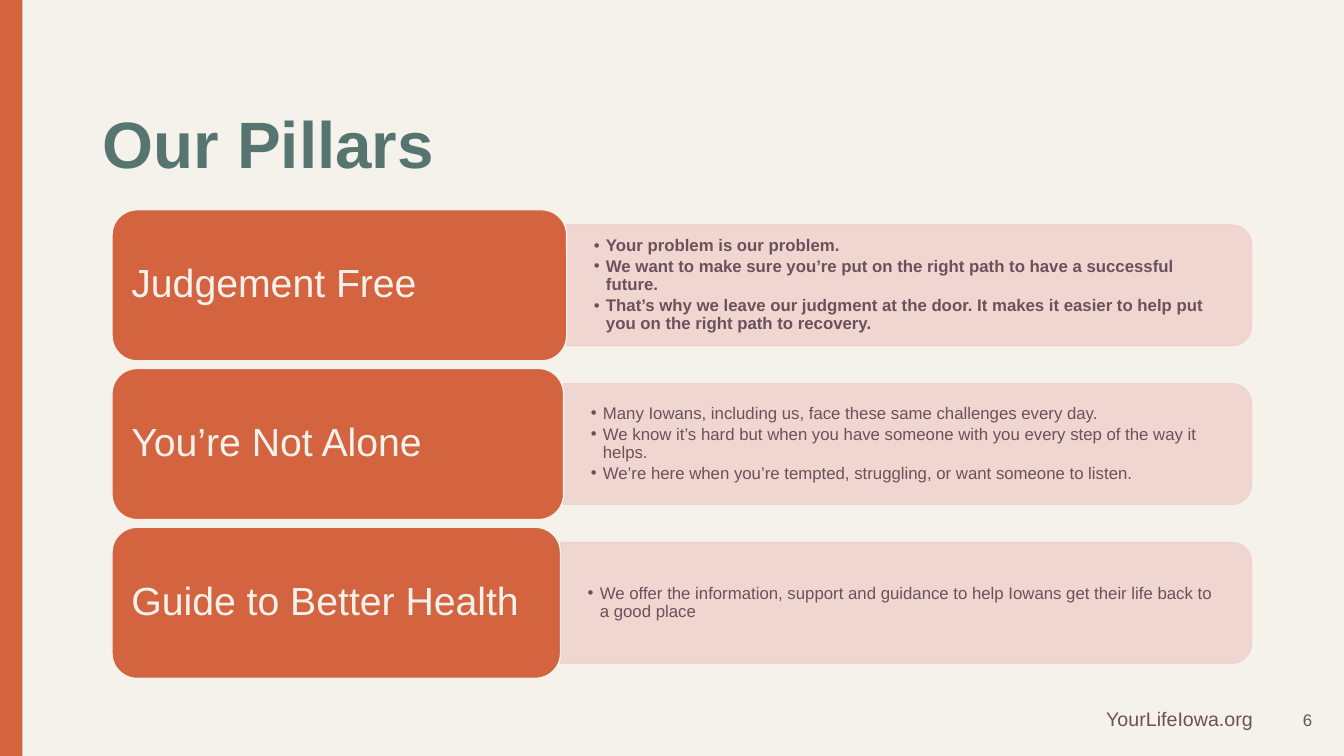
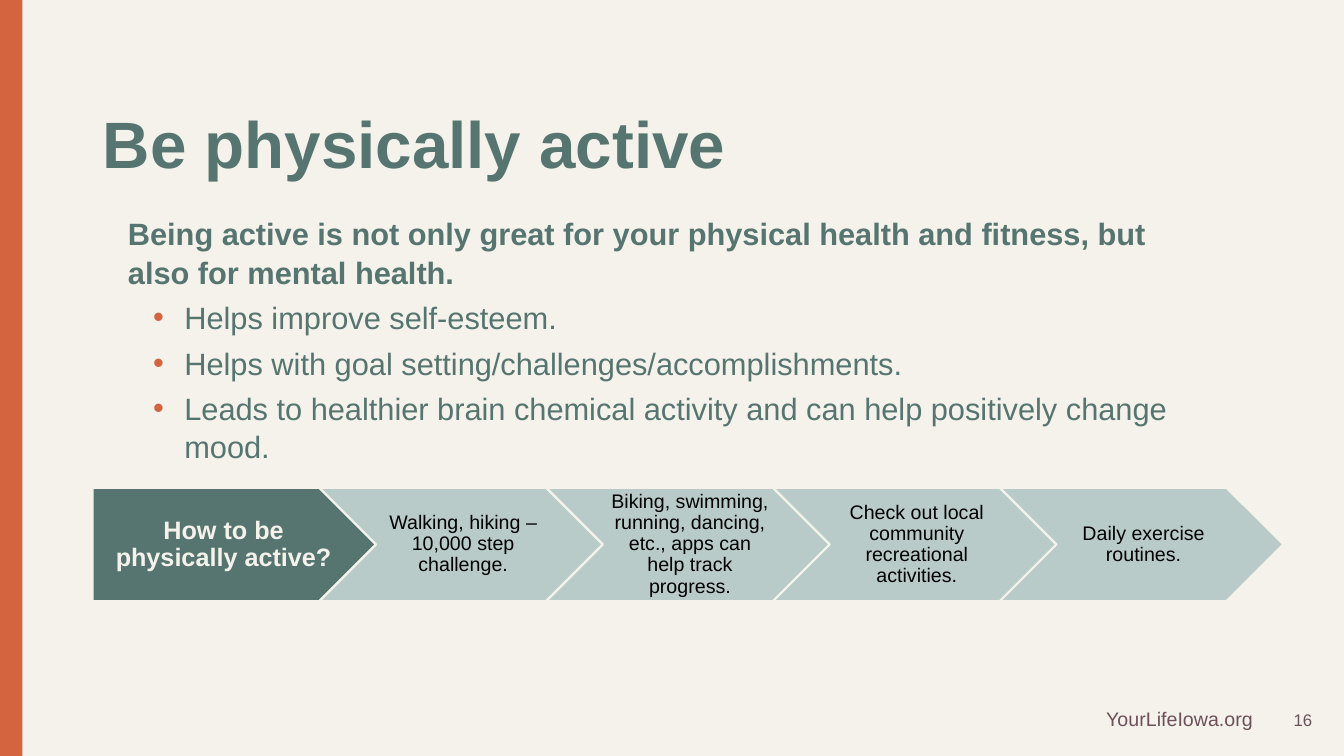
from lxml.etree import SubElement
from pptx import Presentation
from pptx.dml.color import RGBColor
from pptx.enum.shapes import MSO_SHAPE
from pptx.enum.text import MSO_ANCHOR, MSO_AUTO_SIZE, PP_ALIGN
from pptx.oxml.ns import qn
from pptx.util import Inches, Pt

COLORS = {
    "paper": "F4F2EB",
    "orange": "D46340",
    "green": "577570",
    "mist": "B9CBC8",
    "blush": "EFD3CF",
    "plum": "6B5159",
    "black": "000000",
}
FONT = "Arial"
COLUMNS, ROWS = 48, 27
WIDTH, HEIGHT = Inches(13.33), Inches(7.5)

PILLARS = [
    ("Judgement Free", True, [
        "Your problem is our problem.",
        "We want to make sure you’re put on the right path to have a successful future.",
        "That’s why we leave our judgment at the door. It makes it easier to help put you "
        "on the right path to recovery.",
    ]),
    ("You’re Not Alone", False, [
        "Many Iowans, including us, face these same challenges every day.",
        "We know it’s hard but when you have someone with you every step of the way it helps.",
        "We’re here when you’re tempted, struggling, or want someone to listen.",
    ]),
    ("Guide to Better Health", False, [
        "We offer the information, support and guidance to help Iowans get their life back "
        "to a good place",
    ]),
]
BENEFITS = [
    "Helps improve self-esteem.",
    "Helps with goal setting/challenges/accomplishments.",
    "Leads to healthier brain chemical activity and can help positively change mood.",
]
ACTIVITIES = [
    "Walking, hiking – 10,000 step challenge.",
    "Biking, swimming, running, dancing, etc., apps can help track progress.",
    "Check out local community recreational activities.",
    "Daily exercise routines.",
]


def rgb(name):
    """Return the named colour."""
    return RGBColor.from_string(COLORS[name])


def across(columns):
    """Return the length of a number of grid columns."""
    return round(WIDTH * columns / COLUMNS)


def down(rows):
    """Return the length of a number of grid rows."""
    return round(HEIGHT * rows / ROWS)


def place(left, top, width, height):
    """Return a grid area as slide lengths."""
    return across(left), down(top), across(width), down(height)


def write(frame, text, *, size, color, bold=False, align=PP_ALIGN.LEFT, line=1.0,
          before=0, after=0, margin=0, hang=0, bullet=None):
    """Write one formatted paragraph into a text frame."""
    first = frame.paragraphs[0]
    para = frame.add_paragraph() if first.runs else first
    properties = para._p.get_or_add_pPr()
    properties.set("marL", str(Inches(margin)))
    properties.set("indent", str(-Inches(hang)))
    if bullet:
        tint = SubElement(properties, qn("a:buClr"))
        SubElement(tint, qn("a:srgbClr"), val=COLORS[bullet])
        SubElement(properties, qn("a:buFont"), typeface=FONT)
        SubElement(properties, qn("a:buChar"), char="•")
    para.alignment = align
    para.line_spacing = line
    para.space_before = Pt(before)
    para.space_after = Pt(after)
    span = para.add_run()
    span.text = text
    span.font.name = FONT
    span.font.size = Pt(size)
    span.font.bold = bold
    span.font.color.rgb = rgb(color)


class Board:
    """Hold the shared style and the current slide."""

    def __init__(self):
        """Start a deck with the shared background."""
        self.deck = Presentation()
        self.deck.slide_width, self.deck.slide_height = WIDTH, HEIGHT
        fill = self.deck.slide_master.background.fill
        fill.solid()
        fill.fore_color.rgb = rgb("paper")
        self.page = None

    def start(self, title, number):
        """Add a slide with its side band, title, footer and number."""
        self.page = self.deck.slides.add_slide(self.deck.slide_layouts[5])
        self.shape(MSO_SHAPE.RECTANGLE, (0, 0, 0.8, ROWS), "orange")
        box = self.page.shapes.title
        box.left, box.top, box.width, box.height = place(3.31, 3.89, 41.4, 2.77)
        self.frame(box, MSO_ANCHOR.MIDDLE)
        write(box.text_frame, title, size=46.8, color="green", bold=True, line=0.9)
        footer = self.text((37.55, 25.06, 7.56, 1.22))
        write(footer, "YourLifeIowa.org", size=14, color="plum", align=PP_ALIGN.RIGHT)
        corner = self.text((44.78, 24.98, 2.45, 1.44), MSO_ANCHOR.MIDDLE)
        write(corner, str(number), size=12, color="plum", align=PP_ALIGN.RIGHT)

    def frame(self, box, anchor, insets=(0.36, 0.18, 0.36, 0.18)):
        """Set wrapping, anchor and insets of a box and return its frame."""
        frame = box.text_frame
        frame.word_wrap = True
        frame.auto_size = MSO_AUTO_SIZE.NONE
        frame.vertical_anchor = anchor
        left, top, right, bottom = insets
        frame.margin_left, frame.margin_right = across(left), across(right)
        frame.margin_top, frame.margin_bottom = down(top), down(bottom)
        return frame

    def text(self, area, anchor=MSO_ANCHOR.TOP, **options):
        """Add a text box and return its frame."""
        box = self.page.shapes.add_textbox(*place(*area))
        return self.frame(box, anchor, **options)

    def shape(self, kind, area, fill, line=None, weight=1):
        """Add a flat preset shape."""
        shape = self.page.shapes.add_shape(kind, *place(*area))
        shape.shadow.inherit = False
        shape.fill.solid()
        shape.fill.fore_color.rgb = rgb(fill)
        if line:
            shape.line.color.rgb = rgb(line)
            shape.line.width = Pt(weight)
        else:
            shape.line.fill.background()
        return shape

    def panel(self, left, top, width, height):
        """Add a translucent panel rounded on its right side."""
        area = (left + (width - height) / 2, top + (height - width) / 2, height, width)
        shape = self.shape(MSO_SHAPE.ROUND_2_SAME_RECTANGLE, area, "blush", "blush")
        shape.rotation = 90
        for color in shape._element.spPr.iter(qn("a:srgbClr")):
            SubElement(color, qn("a:alpha"), val="90000")

    def pillar(self, top, card_width, heading, bold, points):
        """Add a heading card with its panel of points."""
        left, right, card_height, panel_height = 4, 44.7, 5.4, 4.32
        start = left + card_width
        area = (start, top + (card_height - panel_height) / 2, right - start, panel_height)
        self.panel(*area)
        frame = self.text(area, MSO_ANCHOR.MIDDLE, insets=(0.97, 0.5, 1.18, 0.5))
        for point in points:
            write(frame, point, size=12, color="plum", bold=bold, line=0.9, after=2,
                  margin=0.12, hang=0.12, bullet="plum")
        card = self.shape(MSO_SHAPE.ROUNDED_RECTANGLE,
                          (left, top, card_width, card_height), "orange", "paper")
        frame = self.frame(card, MSO_ANCHOR.MIDDLE, (0.43, 0.22, 0.43, 0.22))
        write(frame, heading, size=28, color="paper", line=0.9)

    def step(self, kind, index, fill, text, insets, **style):
        """Add one arrow of the process row."""
        area = (3.31 + 8.1 * index, 17.42, 10.12, 4.05)
        arrow = self.shape(kind, area, fill, "paper", 1.5)
        frame = self.frame(arrow, MSO_ANCHOR.MIDDLE, insets)
        write(frame, text, align=PP_ALIGN.CENTER, line=0.9, **style)


def main():
    """Build and save the deck."""
    board = Board()

    board.start("Our Pillars", 6)
    for index, (heading, bold, points) in enumerate(PILLARS):
        board.pillar(7.49 + 5.67 * index, 16.24 - 0.11 * index, heading, bold, points)

    board.start("Be physically active", 16)
    body = board.text((3.31, 7.45, 40.46, 9.5))
    write(body, "Being active is not only great for your physical health and fitness, "
          "but also for mental health.", size=22, color="green", bold=True, line=1.04,
          margin=0.25)
    for benefit in BENEFITS:
        write(body, benefit, size=22, color="green", line=1.04, before=5,
              margin=0.81, hang=0.31, bullet="orange")
    board.step(MSO_SHAPE.PENTAGON, 0, "green", "How to be physically active?",
               (0.36, 0.18, 0.11, 0.18), size=18, color="paper", bold=True)
    for index, activity in enumerate(ACTIVITIES, 1):
        board.step(MSO_SHAPE.CHEVRON, index, "mist", activity,
                   (0.22, 0.14, 0.07, 0.14), size=14, color="black")

    board.deck.save("out.pptx")


if __name__ == "__main__":
    main()
